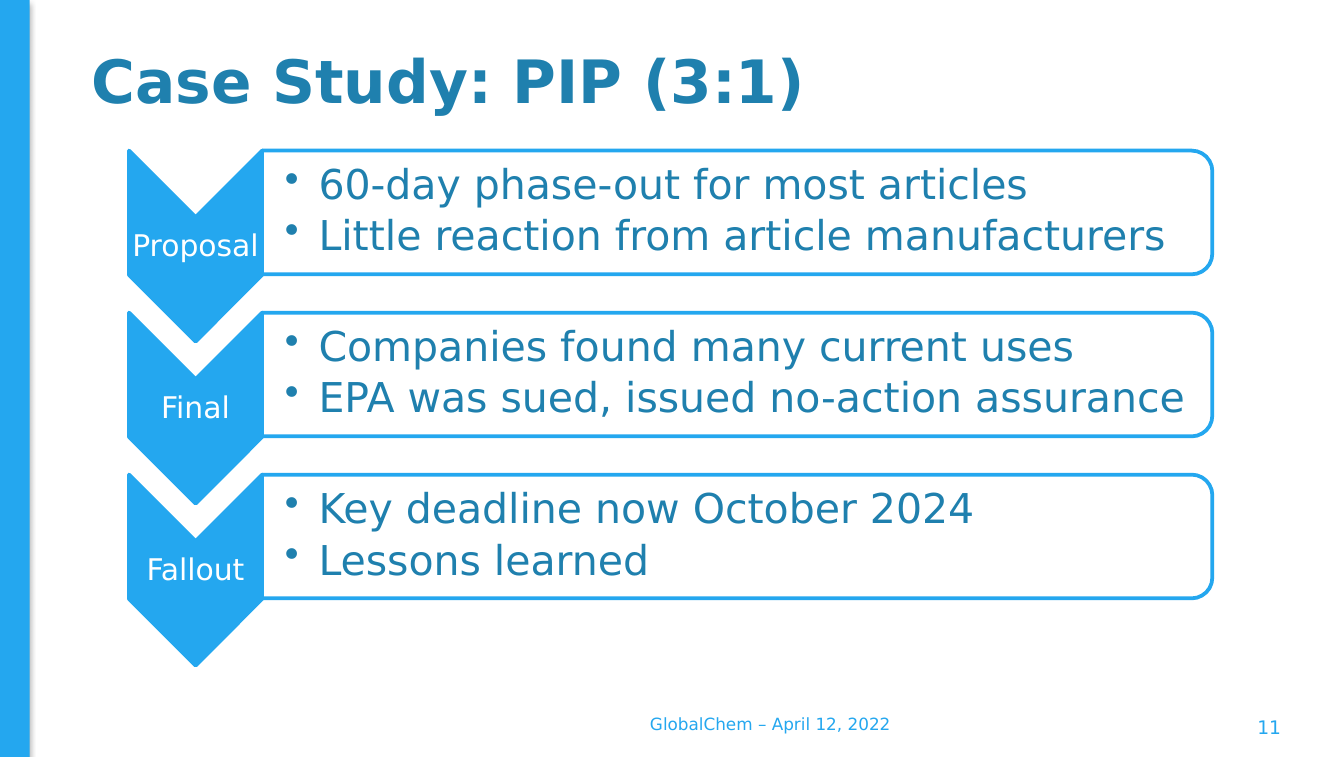
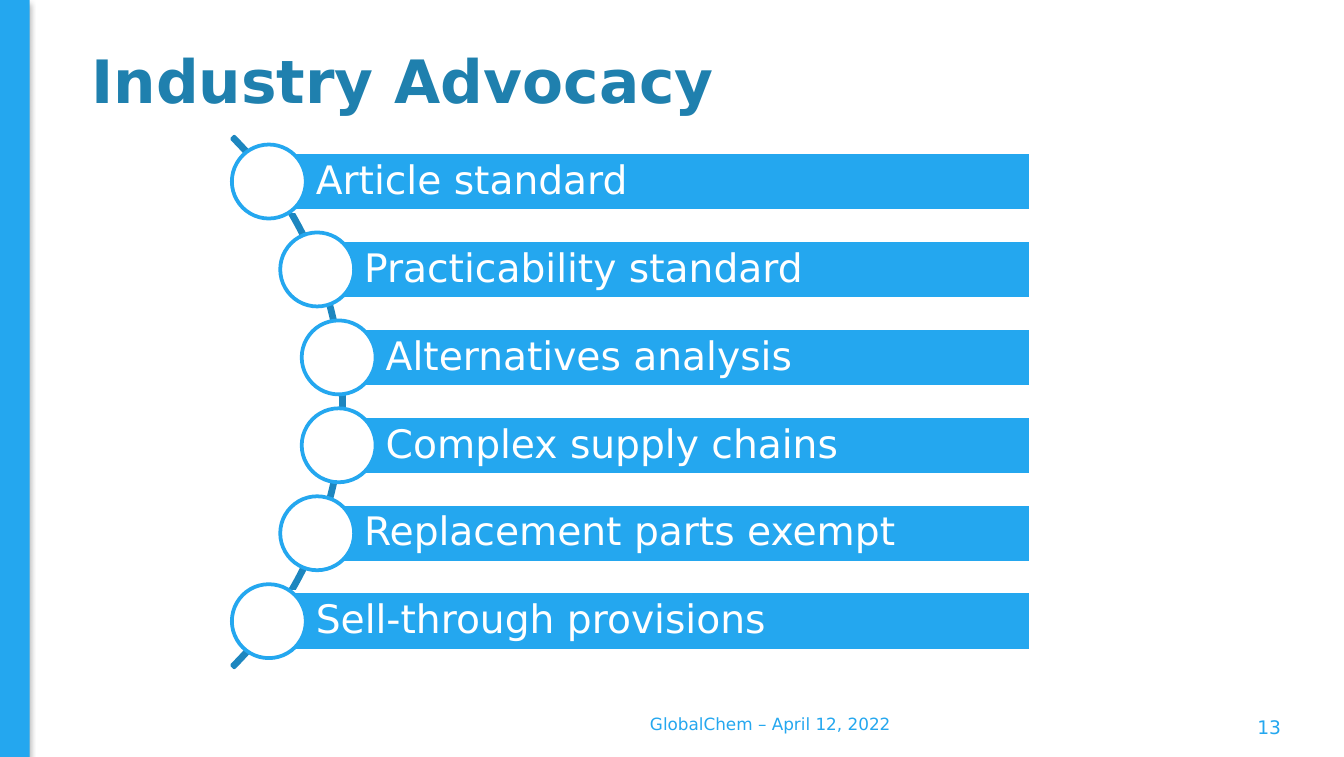
"""Build two slides on a rule-making case study and industry advocacy."""
from dataclasses import dataclass
from typing import NamedTuple

from lxml import etree
from pptx import Presentation
from pptx.dml.color import RGBColor
from pptx.enum.shapes import MSO_SHAPE
from pptx.enum.text import MSO_ANCHOR, MSO_AUTO_SIZE, PP_ALIGN
from pptx.oxml.ns import qn
from pptx.presentation import Presentation as Deck
from pptx.shapes.autoshape import Shape
from pptx.slide import Slide
from pptx.text.text import TextFrame
from pptx.util import Inches, Pt

RECT = MSO_SHAPE.RECTANGLE
CHEVRON = MSO_SHAPE.CHEVRON
PANEL = MSO_SHAPE.ROUND_2_SAME_RECTANGLE
OVAL = MSO_SHAPE.OVAL
ARC = MSO_SHAPE.BLOCK_ARC
MIDDLE = MSO_ANCHOR.MIDDLE
FIXED = MSO_AUTO_SIZE.NONE
LEFT, CENTER, RIGHT = PP_ALIGN.LEFT, PP_ALIGN.CENTER, PP_ALIGN.RIGHT

SKY = RGBColor(0x24, 0xA7, 0xEF)
TEAL = RGBColor(0x1F, 0x80, 0xAE)
BLUE = RGBColor(0x1D, 0x86, 0xBF)
WHITE = RGBColor(0xFF, 0xFF, 0xFF)

FONT = "DejaVu Sans"
WIDTH, HEIGHT = 10, 5.63
FOOTER = "GlobalChem – April 12, 2022"


class Box(NamedTuple):
    """Left, top, width and height in inches."""
    left: float
    top: float
    width: float
    height: float

    def turn(self) -> "Box":
        """Give the frame that fills this box once rotated a quarter turn."""
        shift = (self.width - self.height) / 2
        return Box(self.left + shift, self.top - shift, self.height, self.width)

    def emu(self) -> list[int]:
        """Give the four lengths for python-pptx."""
        return [Inches(value) for value in self]


class Pad(NamedTuple):
    """Text insets in inches."""
    left: float = 0.1
    top: float = 0.05
    right: float = 0.1
    bottom: float = 0.05


@dataclass(frozen=True)
class Style:
    """Look of a text."""
    size: float
    color: RGBColor
    align: PP_ALIGN = LEFT
    bold: bool = False
    line: float = 1.0
    after: float = 0
    bullet: bool = False
    pad: Pad = Pad()


class Stage(NamedTuple):
    """A chevron label with its points."""
    label: str
    points: list[str]


class Bar(NamedTuple):
    """A bar label with the bar's left edge."""
    label: str
    left: float


HEAD = Style(32, TEAL, bold=True, line=0.9)
NUMBER = Style(10, SKY, RIGHT)
NOTE = Style(9, SKY, CENTER)
LABEL = Style(16, WHITE, CENTER, line=0.9, pad=Pad(0.01, 0.01, 0.01, 0.01))
POINT = Style(22, TEAL, line=0.9, after=4, bullet=True,
              pad=Pad(0.17, 0.02, 0.02, 0.02))
ITEM = Style(21, WHITE, line=0.9, pad=Pad(0.35, 0.06, 0.06, 0.06))

STAGES = [
    Stage("Proposal", ["60-day phase-out for most articles",
                       "Little reaction from article manufacturers"]),
    Stage("Final", ["Companies found many current uses",
                    "EPA was sued, issued no-action assurance"]),
    Stage("Fallout", ["Key deadline now October 2024", "Lessons learned"]),
]
BARS = [
    Bar("Article standard", 2),
    Bar("Practicability standard", 2.36),
    Bar("Alternatives analysis", 2.52),
    Bar("Complex supply chains", 2.52),
    Bar("Replacement parts exempt", 2.36),
    Bar("Sell-through provisions", 2),
]
BAR_TOP, BAR_LAST, BAR_RIGHT = 1.13, 4.4, 7.67
BAR_HIGH, DOT = 0.44, 0.55


def write(frame: TextFrame, lines: list[str], style: Style) -> None:
    """Fill a text frame with styled paragraphs."""
    frame.word_wrap = True
    frame.auto_size = FIXED
    frame.vertical_anchor = MIDDLE
    pad = style.pad
    frame.margin_left, frame.margin_top = Inches(pad.left), Inches(pad.top)
    frame.margin_right, frame.margin_bottom = Inches(pad.right), Inches(pad.bottom)
    for index, text in enumerate(lines):
        para = frame.add_paragraph() if index else frame.paragraphs[0]
        para.text = text
        if style.bullet:
            para.level = 1
            props = para._p.get_or_add_pPr()
            props.set("marL", str(Inches(0.25)))
            props.set("indent", str(-Inches(0.25)))
            etree.SubElement(props, qn("a:buChar")).set("char", "•")
        para.alignment = style.align
        para.line_spacing = style.line
        para.space_before = Pt(0)
        para.space_after = Pt(style.after)
        font = para.font
        font.name, font.size, font.bold = FONT, Pt(style.size), style.bold
        font.color.rgb = style.color


def add_text(slide: Slide, box: Box, lines: list[str], style: Style) -> None:
    """Add a text box."""
    write(slide.shapes.add_textbox(*box.emu()).text_frame, lines, style)


def add_form(slide: Slide, kind: MSO_SHAPE, box: Box, fill: RGBColor | None,
             line: RGBColor | None = None, angle: float = 0) -> Shape:
    """Add a flat preset shape."""
    form = slide.shapes.add_shape(kind, *box.emu())
    form.shadow.inherit = False
    form.rotation = angle
    if fill is None:
        form.fill.background()
    else:
        form.fill.solid()
        form.fill.fore_color.rgb = fill
    if line is None:
        form.line.fill.background()
    else:
        form.line.color.rgb = line
        form.line.width = Pt(2)
    return form


def add_alpha(color: etree._Element, share: int) -> None:
    """Set the opacity of a colour element in percent."""
    etree.SubElement(color, qn("a:alpha")).set("val", str(share * 1000))


def add_band(slide: Slide) -> None:
    """Add the left band with its soft shadow."""
    band = add_form(slide, RECT, Box(0, 0, 0.22, HEIGHT), SKY)
    effects = band._element.spPr.find(qn("a:effectLst"))
    shade = etree.SubElement(effects, qn("a:outerShdw"), blurRad=str(Pt(3.1)),
                             dist=str(Pt(1.8)), dir="5400000", rotWithShape="0")
    color = etree.SubElement(shade, qn("a:srgbClr"), val="000000")
    add_alpha(color, 35)


def add_page(deck: Deck, title: str, number: int) -> Slide:
    """Add a slide with band, title, number and footer."""
    slide = deck.slides.add_slide(deck.slide_layouts[5])
    add_band(slide)
    head = slide.shapes.title
    head.left, head.top, head.width, head.height = Box(0.58, 0.2, 8.96, 0.85).emu()
    write(head.text_frame, [title], HEAD)
    add_text(slide, Box(8.62, 5.31, 1.01, 0.2), [str(number)], NUMBER)
    add_text(slide, Box(2.32, 5.23, 6.82, 0.3), [FOOTER], NOTE)
    return slide


def add_stage(slide: Slide, stage: Stage, top: float) -> None:
    """Add a chevron and the panel beside it."""
    add_form(slide, CHEVRON, Box(0.96, top, 0.99, 1.42).turn(), SKY, SKY, 90)
    add_text(slide, Box(0.96, top + 0.5, 0.99, 0.43), [stage.label], LABEL)
    panel = add_form(slide, PANEL, Box(1.95, top, 7.07, 0.92).turn(), WHITE, SKY, 90)
    add_alpha(panel._element.spPr.find(qn("a:solidFill"))[0], 90)
    add_text(slide, Box(1.95, top + 0.04, 7.02, 0.83), stage.points, POINT)


def add_bar(slide: Slide, bar: Bar, top: float) -> None:
    """Add a bar with a dot on its left edge."""
    box = Box(bar.left, top, BAR_RIGHT - bar.left, BAR_HIGH)
    form = add_form(slide, RECT, box, SKY, WHITE)
    write(form.text_frame, [bar.label], ITEM)
    dot = Box(bar.left - DOT / 2, top + (BAR_HIGH - DOT) / 2, DOT, DOT)
    add_form(slide, OVAL, dot, WHITE, SKY)


def add_study(deck: Deck) -> None:
    """Add the case study slide."""
    slide = add_page(deck, "Case Study: PIP (3:1)", 11)
    for index, stage in enumerate(STAGES):
        add_stage(slide, stage, 1.12 + 1.205 * index)


def add_advocacy(deck: Deck) -> None:
    """Add the advocacy slide."""
    slide = add_page(deck, "Industry Advocacy", 13)
    arc = add_form(slide, ARC, Box(-3.02, 0.2, 5.58, 5.58), None, BLUE)
    for index, value in enumerate((189, 27, 0.004)):
        arc.adjustments[index] = value
    pitch = (BAR_LAST - BAR_TOP) / (len(BARS) - 1)
    for index, bar in enumerate(BARS):
        add_bar(slide, bar, BAR_TOP + pitch * index)


def main() -> None:
    """Build and save the deck."""
    deck = Presentation()
    deck.slide_width, deck.slide_height = Inches(WIDTH), Inches(HEIGHT)
    add_study(deck)
    add_advocacy(deck)
    deck.save("out.pptx")


if __name__ == "__main__":
    main()
